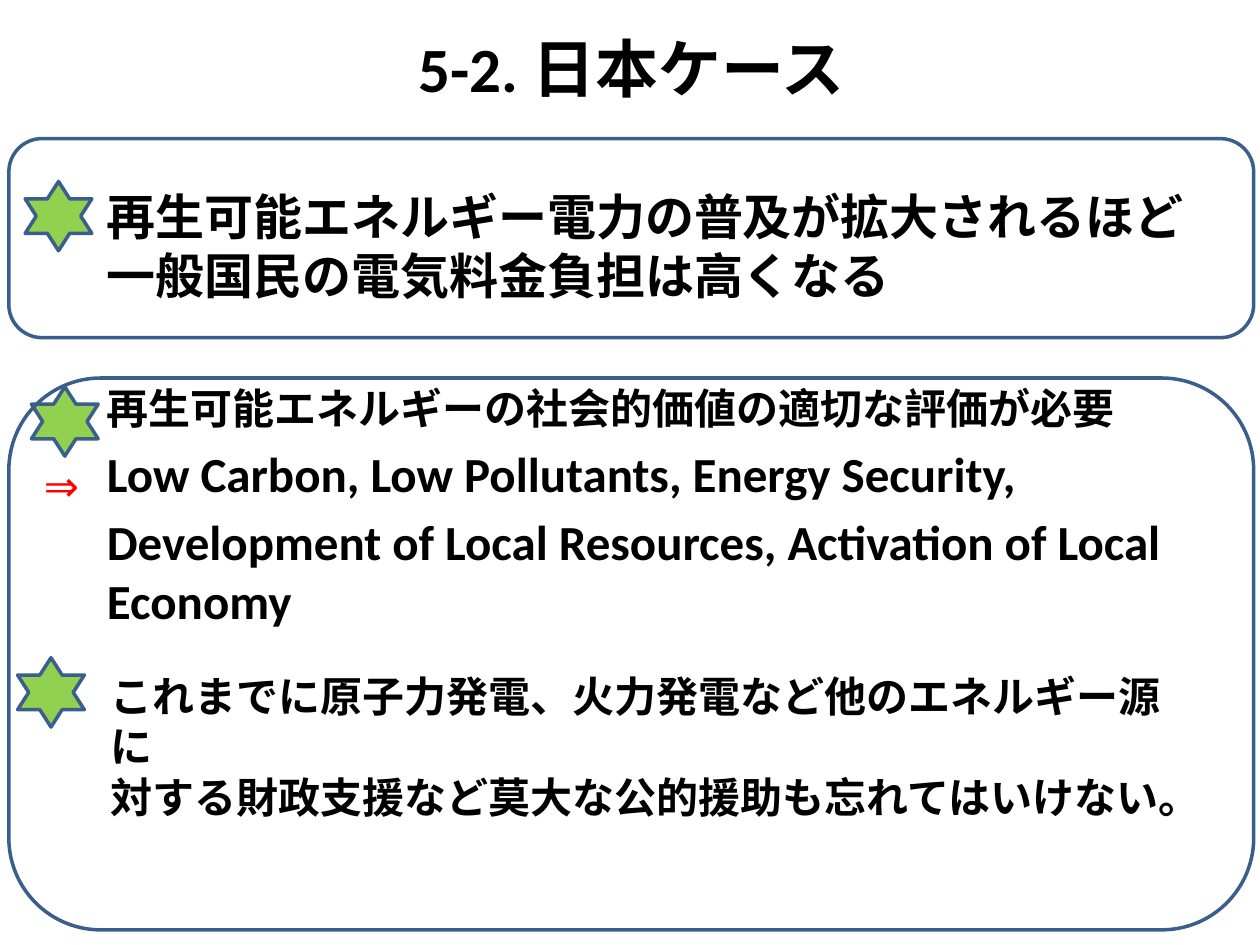
from pptx import Presentation
from pptx.dml.color import RGBColor
from pptx.enum.shapes import MSO_SHAPE
from pptx.enum.text import MSO_ANCHOR, PP_ALIGN
from pptx.util import Inches, Pt

BLACK = RGBColor(0x00, 0x00, 0x00)
RED = RGBColor(0xFF, 0x00, 0x00)
GREEN = RGBColor(0x92, 0xD0, 0x50)
BLUE = RGBColor(0x3A, 0x5F, 0x8C)
STAR, FRAME = MSO_SHAPE.STAR_6_POINT, MSO_SHAPE.ROUNDED_RECTANGLE
TOP, MIDDLE = MSO_ANCHOR.TOP, MSO_ANCHOR.MIDDLE
LEFT, CENTER = PP_ALIGN.LEFT, PP_ALIGN.CENTER


def write(paragraph, text, size=24, color=BLACK, bold=True, align=LEFT, before=0):
    paragraph.alignment = align
    paragraph.space_before = Pt(before)
    run = paragraph.add_run()
    run.text = text
    run.font.name = "Calibri"
    run.font.size = Pt(size)
    run.font.bold = bold
    run.font.color.rgb = color


class CaseSlide:
    """Adds the elements of the case slide in one shared style."""

    def __init__(self, slide):
        self.slide = slide

    def outline(self, kind, left, top, width, height):
        shape = self.slide.shapes.add_shape(
            kind, Inches(left), Inches(top), Inches(width), Inches(height))
        shape.shadow.inherit = False
        shape.line.color.rgb = BLUE
        shape.line.width = Pt(2)
        return shape

    def star(self, left, top):
        star = self.outline(STAR, left, top, 0.53, 0.55)
        star.fill.solid()
        star.fill.fore_color.rgb = GREEN

    def frame(self, top, height):
        self.outline(FRAME, 0.07, top, 9.88, height).fill.background()

    def text(self, left, top, width, height, lines, anchor=TOP, wrap=True):
        frame = self.slide.shapes.add_textbox(
            Inches(left), Inches(top), Inches(width), Inches(height)).text_frame
        frame.word_wrap = wrap
        frame.vertical_anchor = anchor
        for index, (words, style) in enumerate(lines):
            paragraph = frame.add_paragraph() if index else frame.paragraphs[0]
            write(paragraph, words, **style)


def main():
    deck = Presentation()
    deck.slide_width, deck.slide_height = Inches(10), Inches(7.5)
    case = CaseSlide(deck.slides.add_slide(deck.slide_layouts[6]))

    case.text(0.51, 0.14, 9, 0.79,
              [("5-2. 日本ケース", dict(size=36, align=CENTER))], anchor=MIDDLE)
    benefit = dict(size=28, before=5.6)
    case.text(0.75, 1.43, 8.82, 5.91, [
        ("再生可能エネルギー電力の普及が拡大されるほど一般国民の電気料金負担は高くなる", benefit),
        ("再生可能エネルギーの社会的価値の適切な評価が必要", dict(before=45)),
        ("Low Carbon, Low Pollutants, Energy Security,", benefit),
        ("Development of Local Resources, Activation of Local Economy", benefit),
    ])
    for left, top in ((0.2, 1.44), (0.25, 3.07), (0.14, 5.22)):
        case.star(left, top)
    for top, height in ((1.1, 1.58), (3, 4.38)):
        case.frame(top, height)
    case.text(0.25, 3.6, 0.54, 0.5, [("⇒", dict(color=RED, bold=False))], wrap=False)
    case.text(0.78, 5.27, 8.55, 1.31, [
        ("これまでに原子力発電、火力発電など他のエネルギー源に", {}),
        ("対する財政支援など莫大な公的援助も忘れてはいけない。", {}),
    ])
    deck.save("out.pptx")


if __name__ == "__main__":
    main()
